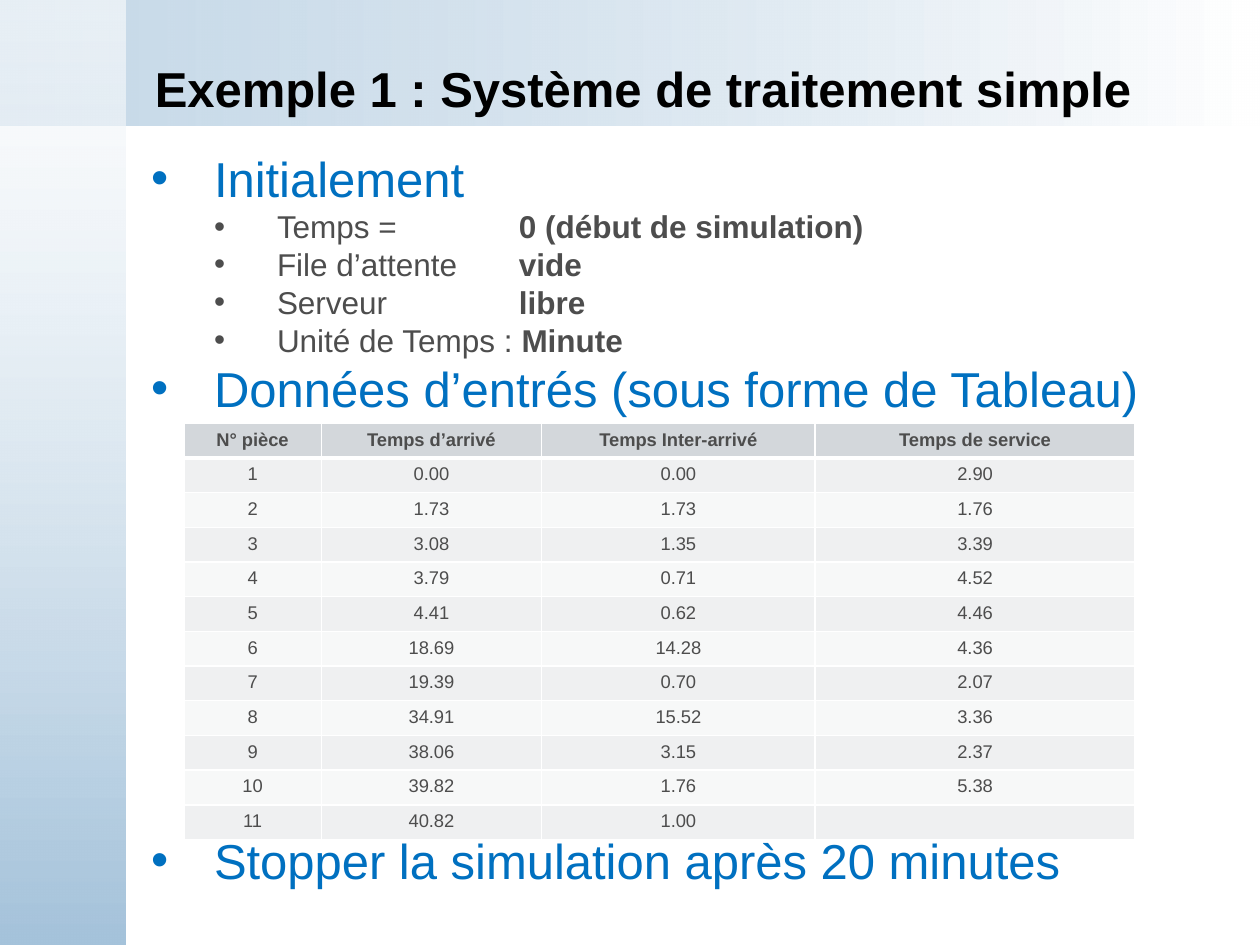
from lxml import etree
from pptx import Presentation
from pptx import util as u
from pptx.dml.color import RGBColor
from pptx.enum import shapes, text
from pptx.oxml import ns

WIDTH, HEIGHT = u.Inches(10), u.Inches(7.5)
FONT = "Arial"
BLACK = RGBColor(0x00, 0x00, 0x00)
WHITE = RGBColor(0xFF, 0xFF, 0xFF)
MIST = RGBColor(0xA5, 0xC3, 0xDB)
BLUE = RGBColor(0x00, 0x70, 0xC0)
GREY = RGBColor(0x4D, 0x4D, 0x4D)
HEADER_FILL = RGBColor(0xD3, 0xD7, 0xDB)
ROW_FILLS = RGBColor(0xEF, 0xF0, 0xF1), RGBColor(0xF7, 0xF8, 0xF8)

INITIAL_STATE = [
    ("Temps =\t", "0 (début de simulation)"),
    ("File d’attente\t", "vide"),
    ("Serveur\t", "libre"),
    ("Unité de Temps : ", "Minute"),
]
HEADINGS = ["N° pièce", "Temps d’arrivé", "Temps Inter-arrivé", "Temps de service"]
COLUMN_WIDTHS = [1.09, 1.75, 2.17, 2.54]
PIECES = [
    ("1", "0.00", "0.00", "2.90"),
    ("2", "1.73", "1.73", "1.76"),
    ("3", "3.08", "1.35", "3.39"),
    ("4", "3.79", "0.71", "4.52"),
    ("5", "4.41", "0.62", "4.46"),
    ("6", "18.69", "14.28", "4.36"),
    ("7", "19.39", "0.70", "2.07"),
    ("8", "34.91", "15.52", "3.36"),
    ("9", "38.06", "3.15", "2.37"),
    ("10", "39.82", "1.76", "5.38"),
    ("11", "40.82", "1.00", ""),
]


def style(font, size, color, bold=False):
    """Set the face, size, colour and weight of a font."""
    font.name, font.size, font.bold = FONT, u.Pt(size), bold
    font.color.rgb = color


def add_band(slide, width, height, angle, colors, opacity):
    """Add a gradient band from the top left corner, its first stop translucent."""
    band = slide.shapes.add_shape(shapes.MSO_SHAPE.RECTANGLE, 0, 0, width, height)
    band.shadow.inherit = False
    band.line.fill.background()
    band.fill.gradient()
    band.fill.gradient_angle = angle
    for stop, color in zip(band.fill.gradient_stops, colors):
        stop.color.rgb = color
    first_color = band.fill._fill._gradFill.find(".//" + ns.qn("a:srgbClr"))
    etree.SubElement(first_color, ns.qn("a:alpha"), val=str(opacity * 1000))


def add_text_frame(slide, left, top, width, height):
    """Add a wrapping text box, in inches, and return its frame."""
    frame = slide.shapes.add_textbox(*map(u.Inches, (left, top, width, height))).text_frame
    frame.word_wrap = True
    return frame


def add_title(slide, wording):
    """Add the slide heading."""
    frame = add_text_frame(slide, 1.13, 0.45, 8.45, 0.49)
    frame.vertical_anchor = text.MSO_ANCHOR.MIDDLE
    heading = frame.paragraphs[0]
    heading.text = wording
    style(heading.font, 28, BLACK, True)


def add_bullet(paragraph, level, tab=None):
    """Give a paragraph a hanging bullet and an optional tab stop in inches."""
    paragraph.level = level
    properties = paragraph._p.get_or_add_pPr()
    properties.set("marL", str(u.Inches(0.5 * (level + 1))))
    properties.set("indent", str(u.Inches(-0.5)))
    etree.SubElement(properties, ns.qn("a:buFont"), typeface=FONT)
    etree.SubElement(properties, ns.qn("a:buChar"), char="•")
    if tab:
        stops = etree.SubElement(properties, ns.qn("a:tabLst"))
        etree.SubElement(stops, ns.qn("a:tab"), pos=str(u.Inches(tab)), algn="l")


def add_topic(paragraph, wording):
    """Fill a paragraph as a large blue topic."""
    add_bullet(paragraph, 0)
    paragraph.text = wording
    style(paragraph.font, 28, BLUE)


def add_state(paragraph, label, value):
    """Fill a paragraph with a label and its bold value."""
    add_bullet(paragraph, 1, tab=2.92)
    style(paragraph.font, 18, GREY)
    paragraph.add_run().text = label
    value_run = paragraph.add_run()
    value_run.text = value
    value_run.font.bold = True


def add_outline(slide):
    """Add the topics, leaving room for the table before the last one."""
    frame = add_text_frame(slide, 1.1, 1.13, 8.49, 6)
    add_topic(frame.paragraphs[0], "Initialement")
    for label, value in INITIAL_STATE:
        add_state(frame.add_paragraph(), label, value)
    add_topic(frame.add_paragraph(), "Données d’entrés (sous forme de Tableau)")
    stop_rule = frame.add_paragraph()
    add_topic(stop_rule, "Stopper la simulation après 20 minutes")
    stop_rule.space_before = u.Pt(236)


def add_rule_below(cell, width):
    """Draw a white bottom border, in points, under a cell."""
    rule = etree.SubElement(cell._tc.get_or_add_tcPr(), ns.qn("a:lnB"), w=str(u.Pt(width)))
    paint = etree.SubElement(rule, ns.qn("a:solidFill"))
    etree.SubElement(paint, ns.qn("a:srgbClr"), val=str(WHITE))


def add_pieces_table(slide):
    """Add the table of arrival and service times."""
    rows = [HEADINGS, *PIECES]
    table = slide.shapes.add_table(
        len(rows), len(HEADINGS), u.Inches(1.46), u.Inches(3.36),
        u.Inches(sum(COLUMN_WIDTHS)), u.Inches(3.3)).table
    for column, width in zip(table.columns, COLUMN_WIDTHS):
        column.width = u.Inches(width)
    for r, values in enumerate(rows):
        for c, value in enumerate(values):
            cell = table.cell(r, c)
            add_rule_below(cell, 1 if r else 3)
            cell.fill.solid()
            cell.fill.fore_color.rgb = ROW_FILLS[(r - 1) % 2] if r else HEADER_FILL
            entry = cell.text_frame.paragraphs[0]
            entry.text = value
            entry.alignment = text.PP_ALIGN.CENTER
            style(entry.font, 10.5, GREY, r == 0)


def main():
    """Build the slide and save it."""
    deck = Presentation()
    deck.slide_width, deck.slide_height = WIDTH, HEIGHT
    slide = deck.slides.add_slide(deck.slide_layouts[6])
    add_band(slide, WIDTH, u.Inches(1), 0, (MIST, WHITE), 62)
    add_band(slide, u.Inches(1), HEIGHT, 270, (WHITE, MIST), 59)
    add_title(slide, "Exemple 1 : Système de traitement simple")
    add_outline(slide)
    add_pieces_table(slide)
    deck.save("out.pptx")


if __name__ == "__main__":
    main()
